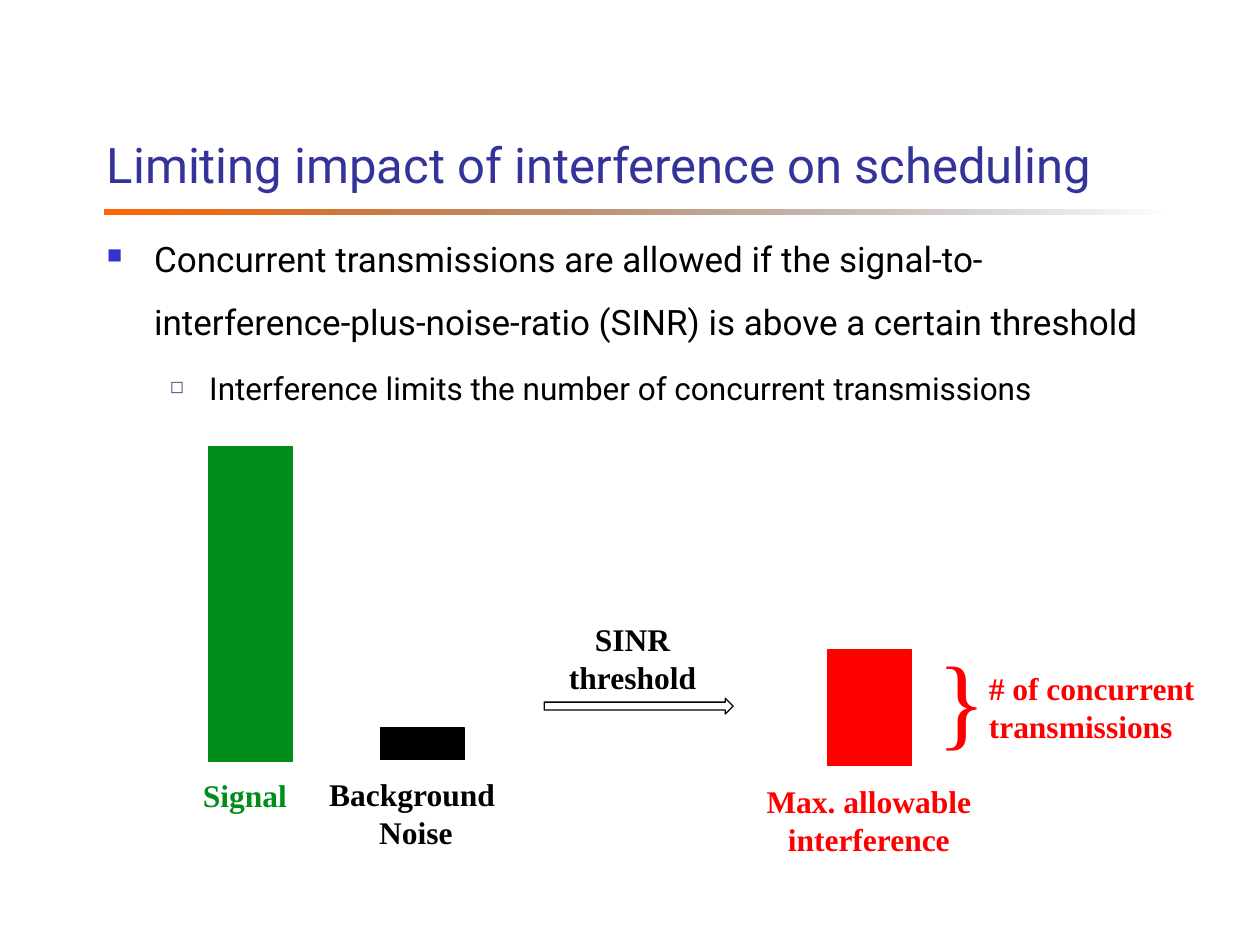
from lxml import etree
from pptx import Presentation
from pptx import util as u
from pptx.dml.color import RGBColor
from pptx.enum import shapes, text
from pptx.oxml import ns

Pt = u.Pt
SANS, SERIF = "Roboto", "Times New Roman"
GREEN, BLACK, RED = "018D1C", "000000", "FF0000"
LEFT, MID = text.PP_ALIGN.LEFT, text.PP_ALIGN.CENTER
RECT = shapes.MSO_SHAPE.RECTANGLE
ARROW = shapes.MSO_SHAPE.RIGHT_ARROW


def color(code):
    return RGBColor.from_string(code)


def add_box(slide, area, lines, size, ink, face=SERIF, bold=True, align=MID):
    """Add a wrapped text box with one paragraph per line."""
    box = slide.shapes.add_textbox(*map(Pt, area))
    frame = box.text_frame
    frame.word_wrap = True
    frame.text = "\n".join(lines)
    for para in frame.paragraphs:
        para.alignment = align
        font = para.font
        font.name, font.size, font.bold = face, Pt(size), bold
        font.color.rgb = color(ink)
    return frame


def add_shape(slide, kind, area, fill=None, line=None):
    shape = slide.shapes.add_shape(kind, *map(Pt, area))
    shape.shadow.inherit = False
    if fill:
        shape.fill.solid()
        shape.fill.fore_color.rgb = color(fill)
    else:
        shape.fill.background()
    if line:
        shape.line.color.rgb = color(line)
        shape.line.width = Pt(0.75)
    else:
        shape.line.fill.background()
    return shape


def add_rule(slide, area, ink):
    """Add a thin bar that fades out to the right."""
    fill = add_shape(slide, RECT, area).fill
    fill.gradient()
    fill.gradient_angle = 0
    first, last = fill.gradient_stops
    first.position, last.position = 0, 1
    first.color.rgb, last.color.rgb = color(ink), color(BLACK)
    tone = fill._xPr.findall(".//" + ns.qn("a:srgbClr"))[-1]
    etree.SubElement(tone, ns.qn("a:alpha"), val="0")


def set_bullet(para, sign, ink, scale, left, hang):
    props = para._p.get_or_add_pPr()
    props.set("marL", str(Pt(left)))
    props.set("indent", str(-Pt(hang)))
    tint = etree.SubElement(props, ns.qn("a:buClr"))
    etree.SubElement(tint, ns.qn("a:srgbClr"), val=ink)
    etree.SubElement(props, ns.qn("a:buSzPct"), val=str(scale * 1000))
    etree.SubElement(props, ns.qn("a:buChar"), char=sign)
    # The schema wants the default run settings after the bullet
    props.append(props.find(ns.qn("a:defRPr")))


def add_head(slide):
    title = add_box(slide, (54, 24, 613.5, 90),
                    ["Limiting impact of interference on scheduling"],
                    28, "333399", SANS, False, LEFT)
    title.vertical_anchor = text.MSO_ANCHOR.BOTTOM
    add_rule(slide, (59.5, 120, 608.5, 2.5), "FF6600")


def add_points(slide):
    body = add_box(slide, (54, 120, 612, 132), [
        "Concurrent transmissions are allowed if the signal-to-"
        "interference-plus-noise-ratio (SINR) is above a certain threshold",
        "Interference limits the number of concurrent transmissions",
    ], 20, BLACK, SANS, False, LEFT)
    main_point, sub = body.paragraphs
    for para in body.paragraphs:
        para.line_spacing = 1.5
    sub.level = 1
    sub.font.size = Pt(18)
    sub.space_before = Pt(4.6)
    set_bullet(main_point, "■", "3333CC", 60, 27, 27)
    set_bullet(sub, "◻", "504785", 55, 58.5, 22.5)


def add_bars(slide):
    bars = [(119, 255, 180, GREEN), (217.5, 416, 18, BLACK),
            (473, 371.5, 66, RED)]
    for left, top, high, ink in bars:
        add_shape(slide, RECT, (left, top, 48, high), ink, ink)


def add_labels(slide):
    labels = [
        ((101, 440, 78, 29), ["Signal"], GREEN, MID),
        ((178.5, 439.5, 114, 51), ["Background", " Noise"], BLACK, MID),
        ((430.5, 443.5, 132, 51), ["Max. allowable interference"], RED, MID),
        ((558, 379, 144, 51), ["# of concurrent", "transmissions"], RED, LEFT),
        ((304.5, 351, 114, 51), ["SINR threshold"], BLACK, MID),
    ]
    for area, lines, ink, align in labels:
        add_box(slide, area, lines, 18, ink, align=align)
    add_box(slide, (523.5, 360, 52.5, 78), ["}"], 58, RED, bold=False)


def main():
    deck = Presentation()
    deck.slide_width, deck.slide_height = Pt(720), Pt(540)
    slide = deck.slides.add_slide(deck.slide_layouts[6])
    add_head(slide)
    add_points(slide)
    add_bars(slide)
    add_shape(slide, ARROW, (311, 399, 108, 9), line=BLACK)
    add_labels(slide)
    deck.save("out.pptx")


if __name__ == "__main__":
    main()
